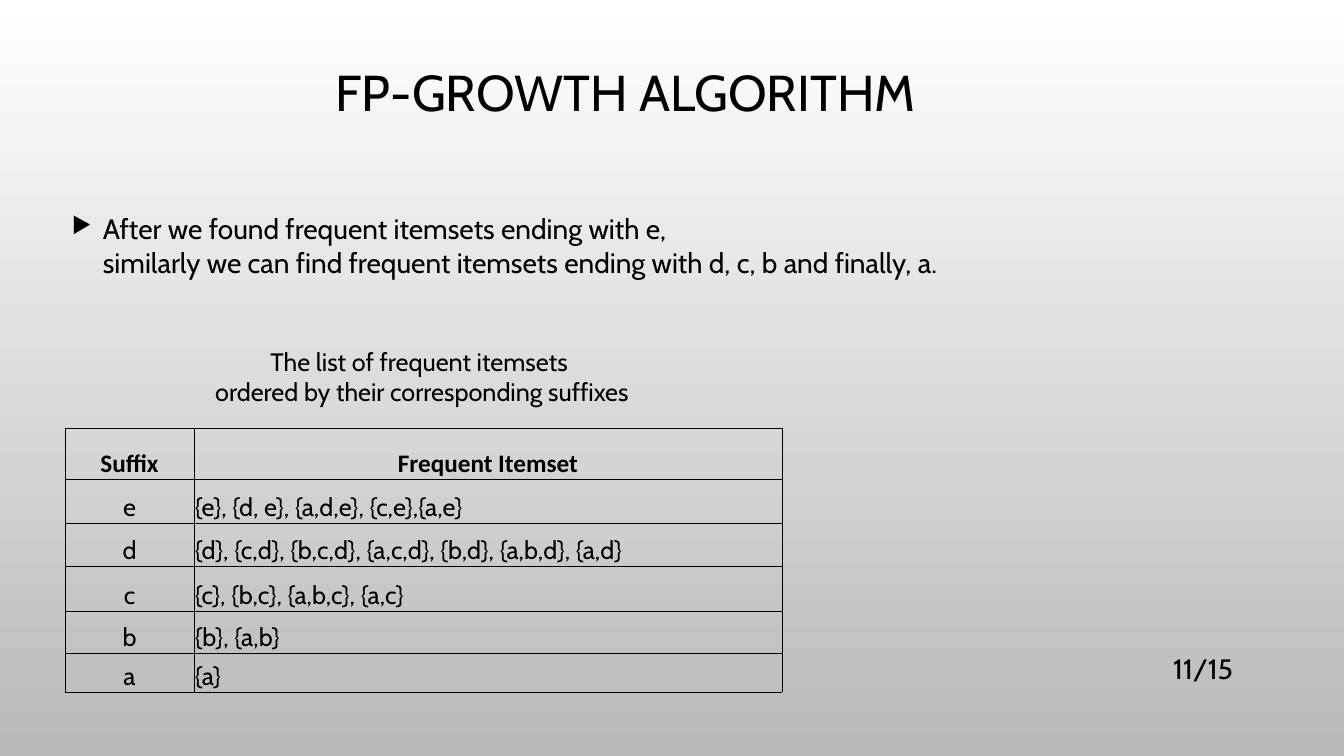
"""Builds the slide on frequent itemsets found by FP-Growth."""
from lxml import etree
from pptx import Presentation
from pptx import util as u
from pptx.dml.color import RGBColor
from pptx.enum import text
from pptx.oxml import ns

THEME = {
    "ink": "000000", "top": "FFFFFF", "base": "B9B9B9",
    "font": "Cabin", "head": "Calibri",
    "title": 36, "body": 20, "cell": 18,
}
PX = 914400 / 100.8
MID, LEFT, RIGHT = text.PP_ALIGN.CENTER, text.PP_ALIGN.LEFT, text.PP_ALIGN.RIGHT
UP, HALF, LOW = text.MSO_ANCHOR.TOP, text.MSO_ANCHOR.MIDDLE, text.MSO_ANCHOR.BOTTOM


def px(n):
    return u.Emu(round(n * PX))


def write(frame, words, size, align, face="font", bold=False):
    par = frame.paragraphs[0]
    par.text = words
    par.alignment = align
    look = {"name": THEME[face], "size": u.Pt(THEME[size]), "bold": bold}
    for run in par.runs:
        for key, val in look.items():
            setattr(run.font, key, val)
        run.font.color.rgb = RGBColor.from_string(THEME["ink"])
    return par


deck = Presentation()
deck.slide_width, deck.slide_height = px(1344), px(756)
slide = deck.slides.add_slide(deck.slide_layouts[6])

back = slide.background.fill
back.gradient()
back.gradient_angle = 270
for stop, tint in zip(back.gradient_stops, ("top", "base")):
    stop.color.rgb = RGBColor.from_string(THEME[tint])

boxes = {
    "title": ((62, 12, 1127, 166), "FP-GROWTH ALGORITHM", "title", MID, HALF),
    "page": ((1119, 648, 124, 40), "11/15", "body", RIGHT, HALF),
    "list": ((62, 341, 720, 72), "The list of frequent itemsets \v"
             "ordered by their corresponding suffixes", "cell", MID, UP),
    "point": ((62, 177, 1031, 136), "After we found frequent itemsets ending with e, \v"
              "similarly we can find frequent itemsets ending with d, c, b and finally, a.",
              "body", LEFT, HALF),
}
pars = {}
for name, (place, words, size, align, anchor) in boxes.items():
    frame = slide.shapes.add_textbox(*map(px, place)).text_frame
    frame.word_wrap = True
    frame.vertical_anchor = anchor
    pars[name] = write(frame, words, size, align)

pars["title"].line_spacing = 0.9
pars["point"].space_after = u.Pt(6)
props = pars["point"]._p.get_or_add_pPr()
props.set("marL", str(px(31)))
props.set("indent", str(-px(31)))
tint = etree.SubElement(props, ns.qn("a:buClr"))
etree.SubElement(tint, ns.qn("a:srgbClr"), val=THEME["ink"])
etree.SubElement(props, ns.qn("a:buSzPct"), val="80000")
etree.SubElement(props, ns.qn("a:buChar"), char="▶")

rows = [
    (51, "Suffix", "Frequent Itemset"),
    (44, "e", "{e}, {d, e}, {a,d,e}, {c,e},{a,e}"),
    (43, "d", "{d}, {c,d}, {b,c,d}, {a,c,d}, {b,d}, {a,b,d}, {a,d}"),
    (45, "c", "{c}, {b,c}, {a,b,c}, {a,c}"),
    (42, "b", "{b}, {a,b}"),
    (39, "a", "{a}"),
]
cols = (129, 588)
high = sum(row[0] for row in rows)
table = slide.shapes.add_table(len(rows), 2, px(65), px(428), px(sum(cols)), px(high)).table
table.first_row = table.horz_banding = False
for col, wide in zip(table.columns, cols):
    col.width = px(wide)

form = {
    "margin_left": px(1), "margin_right": px(1), "margin_top": px(1),
    "margin_bottom": 0, "vertical_anchor": LOW,
}
for r, (tall, *cells) in enumerate(rows):
    table.rows[r].height = px(tall)
    for c, words in enumerate(cells):
        cell = table.cell(r, c)
        for key, val in form.items():
            setattr(cell, key, val)
        top = r == 0
        write(cell.text_frame, words, "cell", MID if top or c == 0 else LEFT,
              "head" if top else "font", top)
        edge = cell._tc.get_or_add_tcPr()
        for side in ("lnL", "lnR", "lnT", "lnB"):
            line = etree.SubElement(edge, ns.qn(f"a:{side}"), w=str(u.Pt(0.5)))
            fill = etree.SubElement(line, ns.qn("a:solidFill"))
            etree.SubElement(fill, ns.qn("a:srgbClr"), val=THEME["ink"])
        cell.fill.background()

deck.save("out.pptx")
